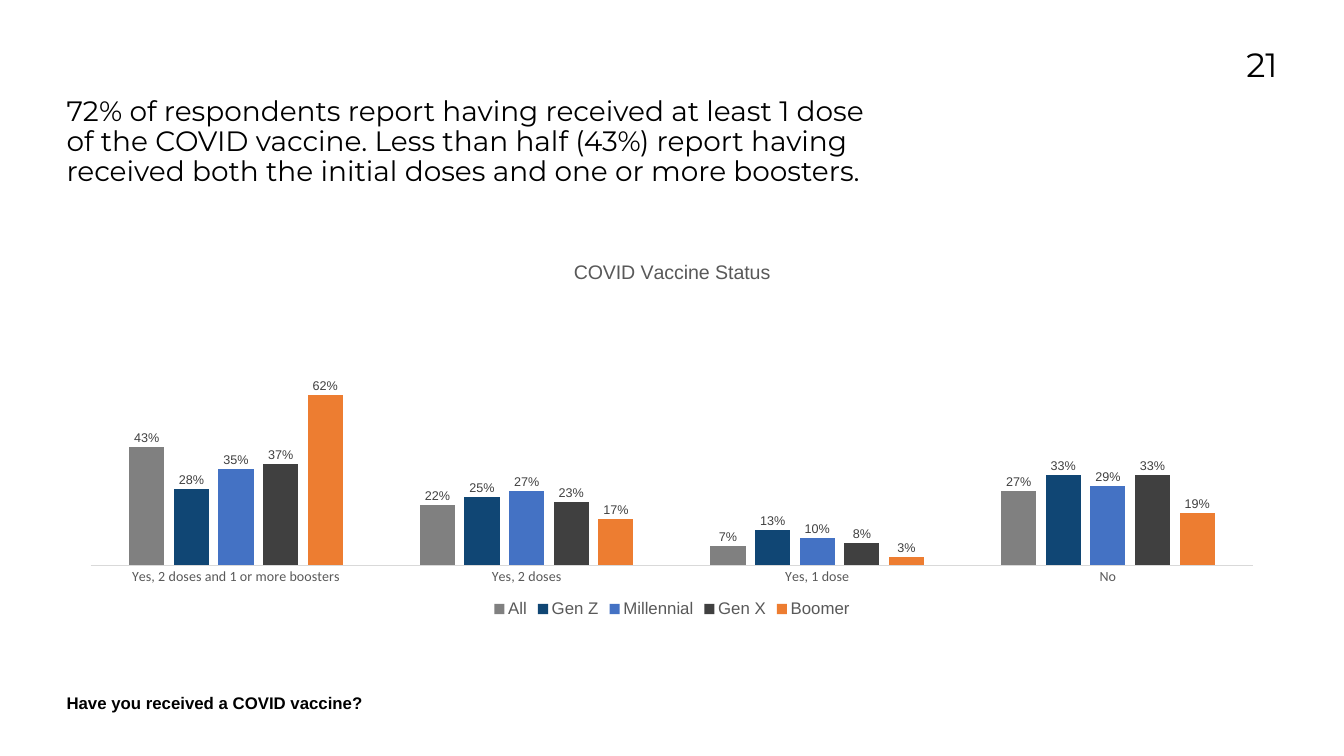
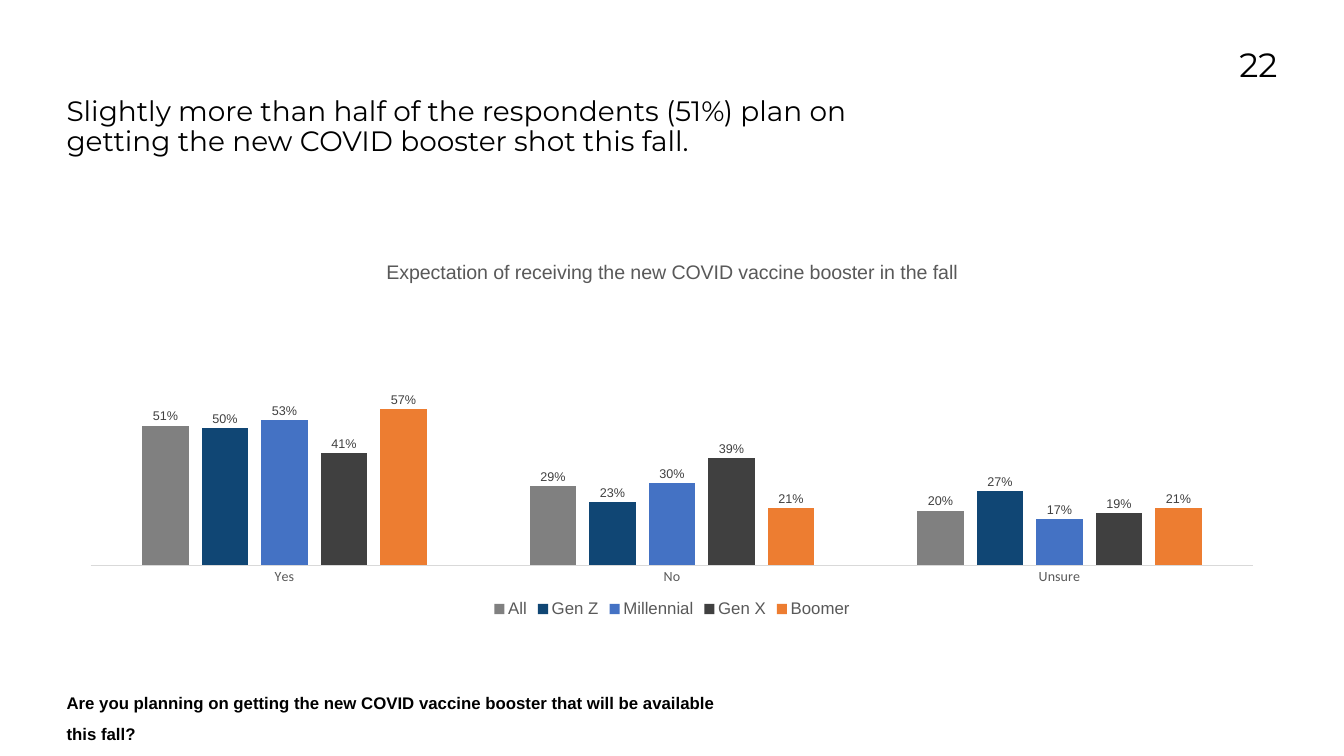
"""Build two survey slides on COVID vaccination, each with a chart by generation."""
import pptx
import pptx.chart.data
import pptx.dml.color
import pptx.enum.chart
import pptx.enum.text
import pptx.oxml
import pptx.oxml.ns
import pptx.util

WIDTH, HEIGHT = 26.67, 15
MARGIN = 4.95
SPAN = 100 - 2 * MARGIN
NUMBER_WIDTH = 8.44

COLORS = {
    "text": "000000", "muted": "595959", "label": "404040", "axis": "D9D9D9",
    "All": "808080", "Gen Z": "104674", "Millennial": "4472C4",
    "Gen X": "404040", "Boomer": "ED7D31",
}

AREAS = {
    "number": (100 - MARGIN - NUMBER_WIDTH, 5.87, NUMBER_WIDTH, 10.93),
    "heading": (MARGIN, 12.87, 60.03, 13.87),
    "chart": (MARGIN, 32.53, SPAN, 49.73),
    "question": (MARGIN, 90.33, 49.76, 4.33),
}
PLOT_SHARES = {"x": 0.02, "y": 0.12, "w": 0.96, "h": 0.73}

PAGES = [
    {
        "number": "21",
        "heading": "72% of respondents report having received at least 1 dose of the COVID "
                   "vaccine. Less than half (43%) report having received both the initial "
                   "doses and one or more boosters.",
        "title": "COVID Vaccine Status",
        "answers": ["Yes, 2 doses and 1 or more boosters", "Yes, 2 doses", "Yes, 1 dose", "No"],
        "shares": {
            "All": (0.43, 0.22, 0.07, 0.27),
            "Gen Z": (0.28, 0.25, 0.13, 0.33),
            "Millennial": (0.35, 0.27, 0.10, 0.29),
            "Gen X": (0.37, 0.23, 0.08, 0.33),
            "Boomer": (0.62, 0.17, 0.03, 0.19),
        },
        "question": "Have you received a COVID vaccine?",
    },
    {
        "number": "22",
        "heading": "Slightly more than half of the respondents (51%) plan on getting the new "
                   "COVID booster shot this fall.",
        "title": "Expectation of receiving the new COVID vaccine booster in the fall",
        "answers": ["Yes", "No", "Unsure"],
        "shares": {
            "All": (0.51, 0.29, 0.20),
            "Gen Z": (0.50, 0.23, 0.27),
            "Millennial": (0.53, 0.30, 0.17),
            "Gen X": (0.41, 0.39, 0.19),
            "Boomer": (0.57, 0.21, 0.21),
        },
        "question": "Are you planning on getting the new COVID vaccine booster that will be "
                    "available this fall?",
    },
]


def color(name):
    """Return the named colour."""
    return pptx.dml.color.RGBColor.from_string(COLORS[name])


def place(area):
    """Turn percentages of the slide into left, top, width and height."""
    return [pptx.util.Inches(share * side / 100)
            for share, side in zip(AREAS[area], (WIDTH, HEIGHT) * 2)]


def style(font, size, fill="text", face="Arial", bold=False):
    """Set face, size, colour and weight of a font."""
    font.name, font.size, font.bold = face, pptx.util.Pt(size), bold
    font.color.rgb = color(fill)


def add_text(page, area, text, align="LEFT", spacing=1.0, **look):
    """Write one paragraph into a named area."""
    frame = page.shapes.add_textbox(*place(area)).text_frame
    frame.word_wrap = True
    frame.margin_left = frame.margin_top = frame.margin_right = frame.margin_bottom = 0
    para = frame.paragraphs[0]
    para.alignment = getattr(pptx.enum.text.PP_ALIGN, align)
    para.line_spacing = spacing
    span = para.add_run()
    span.text = text
    style(span.font, **look)


def fix_plot(chart):
    """Pin the inner plot area to fixed shares of the chart."""
    area = chart.element.xpath("c:chart/c:plotArea")[0]
    for layout in area.xpath("c:layout"):
        area.remove(layout)
    sizes = "".join(f'<c:{side} val="{share}"/>' for side, share in PLOT_SHARES.items())
    area.insert(0, pptx.oxml.parse_xml(
        f'<c:layout {pptx.oxml.ns.nsdecls("c")}><c:manualLayout>'
        '<c:layoutTarget val="inner"/><c:xMode val="edge"/><c:yMode val="edge"/>'
        f'{sizes}</c:manualLayout></c:layout>'))


def add_chart(page, title, answers, shares):
    """Draw clustered columns, one series for each generation."""
    kinds = pptx.enum.chart
    data = pptx.chart.data.CategoryChartData(number_format="0%")
    data.categories = answers
    for group, values in shares.items():
        data.add_series(group, values)
    chart = page.shapes.add_chart(
        kinds.XL_CHART_TYPE.COLUMN_CLUSTERED, *place("chart"), data).chart
    style(chart.font, 10, face="Calibri")

    chart.has_title = True
    para = chart.chart_title.text_frame.paragraphs[0]
    span = para.add_run()
    span.text = title
    style(span.font, 28, "muted")
    chart.chart_title.include_in_layout = False

    chart.has_legend = True
    chart.legend.position = kinds.XL_LEGEND_POSITION.BOTTOM
    chart.legend.include_in_layout = False
    style(chart.legend.font, 24, "muted")

    axis = chart.category_axis
    axis.major_tick_mark = axis.minor_tick_mark = kinds.XL_TICK_MARK.NONE
    axis.format.line.color.rgb = color("axis")
    axis.format.line.width = pptx.util.Pt(0.75)
    style(axis.tick_labels.font, 20, "muted", "Calibri")
    scale = chart.value_axis
    scale.minimum_scale, scale.maximum_scale = 0, 1
    scale.has_major_gridlines = scale.visible = False

    plot = chart.plots[0]
    plot.gap_width, plot.overlap, plot.vary_by_categories = 219, -27, False
    for series in plot.series:
        series.format.fill.solid()
        series.format.fill.fore_color.rgb = color(series.name)
        labels = series.data_labels
        labels.show_value = True
        labels.number_format, labels.number_format_is_linked = "0%", False
        labels.position = kinds.XL_LABEL_POSITION.OUTSIDE_END
        style(labels.font, 18, "label")
    fix_plot(chart)


def main():
    """Build and save the deck."""
    deck = pptx.Presentation()
    deck.slide_width, deck.slide_height = pptx.util.Inches(WIDTH), pptx.util.Inches(HEIGHT)
    for content in PAGES:
        page = deck.slides.add_slide(deck.slide_layouts[6])
        add_text(page, "number", content["number"], align="RIGHT", size=48, face="Montserrat")
        add_chart(page, content["title"], content["answers"], content["shares"])
        add_text(page, "heading", content["heading"], spacing=0.9, size=40, face="Montserrat")
        add_text(page, "question", content["question"], spacing=1.5, size=24, bold=True)
    deck.save("out.pptx")


if __name__ == "__main__":
    main()
